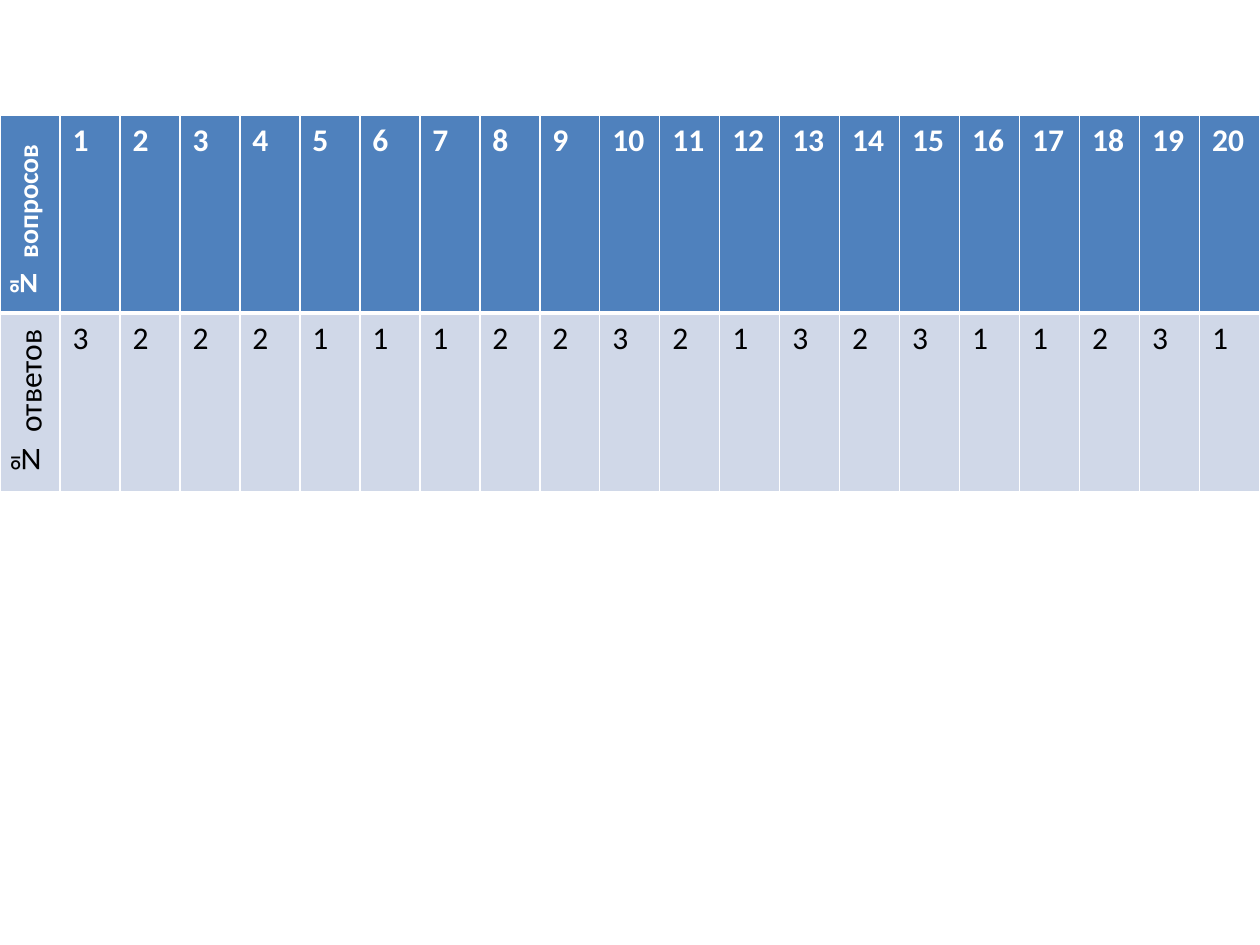
from lxml import etree
from pptx import Presentation
from pptx.dml.color import RGBColor
from pptx.oxml.ns import qn
from pptx.util import Pt

PX = 9144000 / 1260
BLANK_LAYOUT = 6
COLORS = {"header": "4F81BD", "body": "D0D8E8", "white": "FFFFFF", "black": "000000"}
QUESTIONS = ["№ вопросов", *range(1, 21)]
ANSWERS = ["№ ответов", 3, 2, 2, 2, 1, 1, 1, 2, 2, 3, 2, 1, 3, 2, 3, 1, 1, 2, 3, 1]
ROWS = [
    {"values": QUESTIONS, "height": 198, "fill": "header", "color": "white",
     "bold": True, "label_size": 16,
     "borders": {"lnL": 1, "lnR": 1, "lnT": 1, "lnB": 3}},
    {"values": ANSWERS, "height": 179, "fill": "body", "color": "black",
     "bold": False, "label_size": 18,
     "borders": {"lnL": 1, "lnR": 1, "lnT": 3, "lnB": 1}},
]


def emu(pixels):
    """Turn pixels into EMU."""
    return round(pixels * PX)


def set_borders(cell, borders):
    """Draw white cell borders of the given point widths."""
    properties = cell._tc.get_or_add_tcPr()
    for index, (tag, width) in enumerate(borders.items()):
        line = etree.Element(qn(f"a:{tag}"), w=str(Pt(width)))
        fill = etree.SubElement(line, qn("a:solidFill"))
        etree.SubElement(fill, qn("a:srgbClr"), val=COLORS["white"])
        properties.insert(index, line)


def format_cell(cell, value, row, size=18):
    """Write one value in the style of its row."""
    cell.text = str(value)
    cell.fill.solid()
    cell.fill.fore_color.rgb = RGBColor.from_string(COLORS[row["fill"]])
    font = cell.text_frame.paragraphs[0].runs[0].font
    for name, setting in {"name": "Calibri", "size": Pt(size), "bold": row["bold"]}.items():
        setattr(font, name, setting)
    font.color.rgb = RGBColor.from_string(COLORS[row["color"]])
    set_borders(cell, row["borders"])


def add_answer_table(slide, left, top, width):
    """Place the answer key with equal columns and upright row labels."""
    height = sum(row["height"] for row in ROWS)
    box = [emu(length) for length in (left, top, width, height)]
    table = slide.shapes.add_table(len(ROWS), len(QUESTIONS), *box).table
    for column in table.columns:
        column.width = emu(width / len(QUESTIONS))
    for row_index, row in enumerate(ROWS):
        table.rows[row_index].height = emu(row["height"])
        label, *values = row["values"]
        label_cell = table.cell(row_index, 0)
        format_cell(label_cell, label, row, row["label_size"])
        label_cell._tc.get_or_add_tcPr().set("vert", "vert270")
        for column_index, value in enumerate(values, start=1):
            format_cell(table.cell(row_index, column_index), value, row)


def main():
    """Build and save the slide."""
    presentation = Presentation()
    presentation.slide_width = emu(1260)
    presentation.slide_height = emu(945)
    slide = presentation.slides.add_slide(presentation.slide_layouts[BLANK_LAYOUT])
    add_answer_table(slide, 0, 115, 1260)
    presentation.save("out.pptx")


if __name__ == "__main__":
    main()
